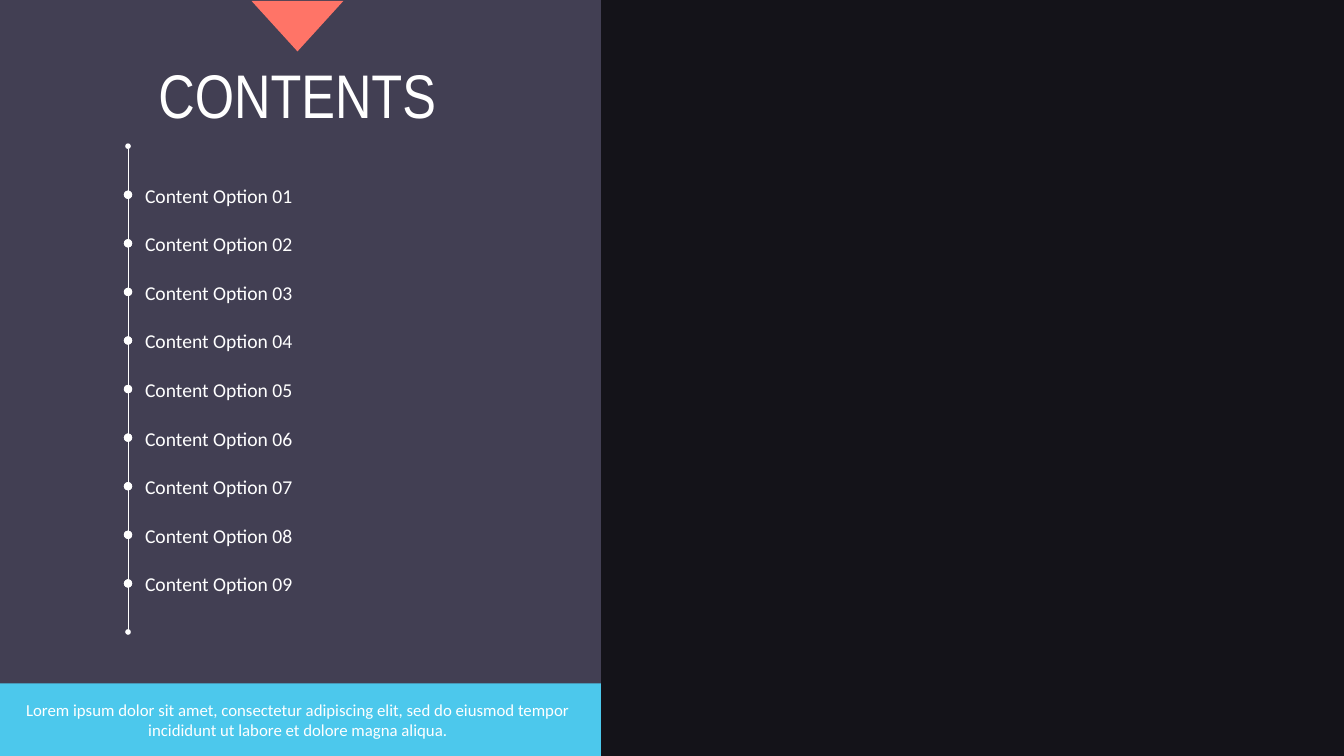
from pptx import Presentation
from pptx.dml.color import RGBColor
from pptx.enum.shapes import MSO_CONNECTOR as Connector, MSO_SHAPE as Shape
from pptx.enum.text import MSO_ANCHOR as Anchor, MSO_AUTO_SIZE as AutoSize, PP_ALIGN as Align
from pptx.oxml.ns import qn
from pptx.util import Inches, Pt
from lxml.etree import SubElement

SLATE = RGBColor(0x52, 0x4E, 0x67)
BLACK = RGBColor(0x00, 0x00, 0x00)
SKY = RGBColor(0x4C, 0xC8, 0xEC)
CORAL = RGBColor(0xFF, 0x74, 0x67)
WHITE = RGBColor(0xFF, 0xFF, 0xFF)

SLIDE_WIDTH, SLIDE_HEIGHT = 13.33, 7.5
PANEL_WIDTH = 5.96
BANNER_HEIGHT = 0.72
OPTIONS = [f"Content Option {number:02}" for number in range(1, 10)]
FOOTER = ("Lorem ipsum dolor sit amet, consectetur adipiscing elit, "
          "sed do eiusmod tempor incididunt ut labore et dolore magna aliqua.")


def add_block(slide, kind, box, color, opacity=100):
    shape = slide.shapes.add_shape(kind, *map(Inches, box))
    shape.shadow.inherit = False
    shape.fill.solid()
    shape.fill.fore_color.rgb = color
    shape.line.fill.background()
    if opacity < 100:
        rgb = shape.fill._xPr.find(".//" + qn("a:srgbClr"))
        SubElement(rgb, qn("a:alpha"), val=str(opacity * 1000))
    return shape


def write_text(shape, text, size, font_name, align=Align.LEFT):
    frame = shape.text_frame
    frame.text = text
    frame.word_wrap = True
    frame.auto_size = AutoSize.SHAPE_TO_FIT_TEXT
    frame.vertical_anchor = Anchor.TOP
    paragraph = frame.paragraphs[0]
    paragraph.alignment = align
    font = paragraph.runs[0].font
    font.size, font.name = Pt(size), font_name
    font.color.rgb = WHITE


def add_label(slide, box, text, size, align=Align.LEFT):
    label = slide.shapes.add_textbox(*map(Inches, box))
    write_text(label, text, size, "Calibri", align)


def add_dotted_line(slide, x, top, bottom, head_size, tail_size):
    line = slide.shapes.add_connector(
        Connector.STRAIGHT, Inches(x), Inches(top), Inches(x), Inches(bottom))
    line.line.color.rgb = WHITE
    line.line.width = Pt(0.5)
    outline = line.line._get_or_add_ln()
    for end, size in (("a:headEnd", head_size), ("a:tailEnd", tail_size)):
        SubElement(outline, qn(end), type="oval", w=size, len=size)
    SubElement(line._element.spPr, qn("a:effectLst"))


def add_backdrop(slide):
    slide.background.fill.solid()
    slide.background.fill.fore_color.rgb = SLATE
    add_block(slide, Shape.RECTANGLE, (0, 0, SLIDE_WIDTH, SLIDE_HEIGHT), BLACK, 75)
    add_block(slide, Shape.RECTANGLE, (0, 0, PANEL_WIDTH, SLIDE_HEIGHT), SLATE, 75)


def add_heading(slide, left, top, width):
    # Title, raised above the backdrop
    title = slide.shapes.title
    title.left, title.top = Inches(left), Inches(top + 0.5)
    title.width, title.height = Inches(width), Inches(0.84)
    write_text(title, "CONTENTS", 44, "Arial Narrow", Align.CENTER)
    slide.shapes._spTree.append(title._element)
    # Pointer above the title
    pointer_width = 0.91
    pointer_left = left + (width - pointer_width) / 2
    pointer = add_block(slide, Shape.ISOSCELES_TRIANGLE,
                        (pointer_left, top, pointer_width, 0.5), CORAL)
    pointer.rotation = 180


def add_timeline(slide, x, top, height):
    count = len(OPTIONS)
    step = height / (count + 1)
    # Segments, with smaller dots at the two outer ends
    for index in range(count + 1):
        add_dotted_line(slide, x, top + index * step, top + (index + 1) * step,
                        "sm" if index == 0 else "med",
                        "sm" if index == count else "med")
    # One label centred on each inner dot
    for index, option in enumerate(OPTIONS, start=1):
        add_label(slide, (x + 0.07, top + index * step - 0.16, 2, 0.34), option, 14)


def add_banner(slide, left, top, width, height):
    add_block(slide, Shape.RECTANGLE, (left, top, width, height), SKY)
    add_label(slide, (left + 0.08, top + 0.11, width - 0.21, 0.5),
              FOOTER, 12, Align.CENTER)


def main():
    presentation = Presentation()
    presentation.slide_width = Inches(SLIDE_WIDTH)
    presentation.slide_height = Inches(SLIDE_HEIGHT)
    slide = presentation.slides.add_slide(presentation.slide_layouts[5])
    add_backdrop(slide)
    add_banner(slide, 0, SLIDE_HEIGHT - BANNER_HEIGHT, PANEL_WIDTH, BANNER_HEIGHT)
    add_heading(slide, 0.95, 0.01, 4)
    add_timeline(slide, 1.27, 1.45, 4.82)
    presentation.save("out.pptx")


if __name__ == "__main__":
    main()
